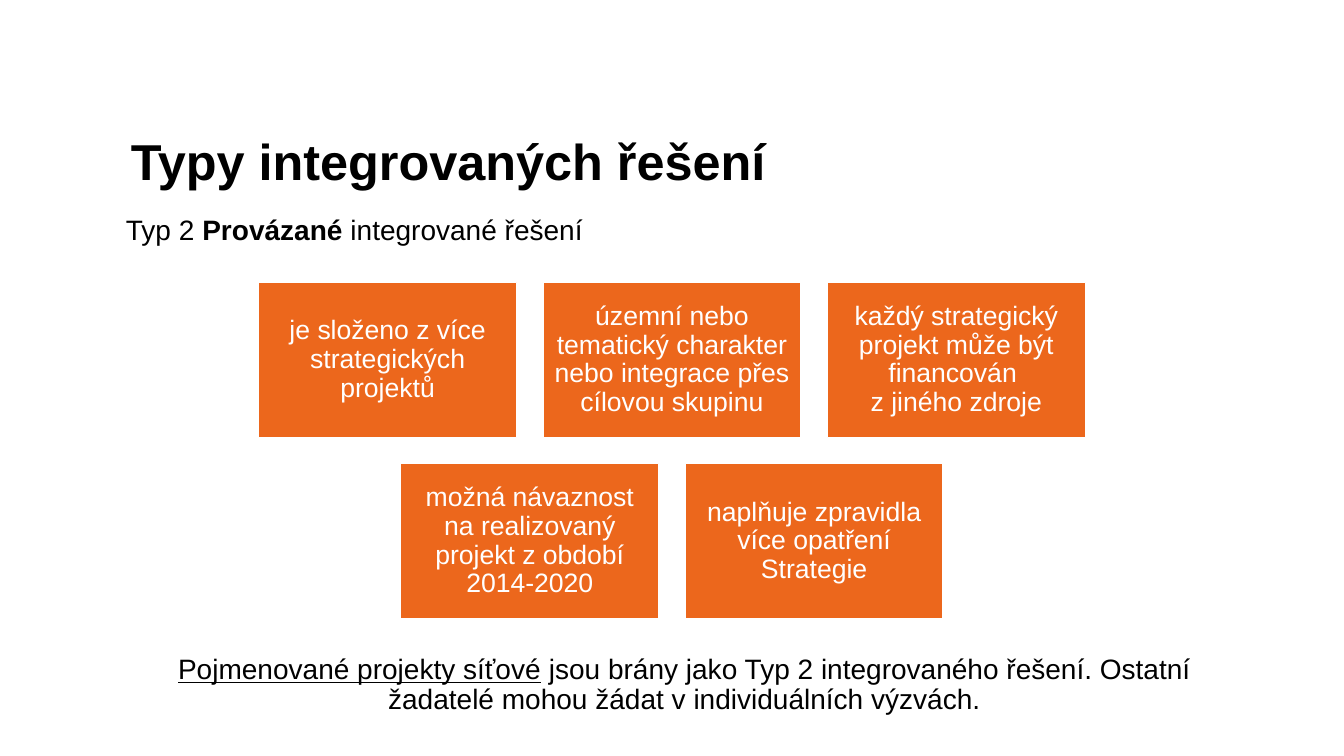
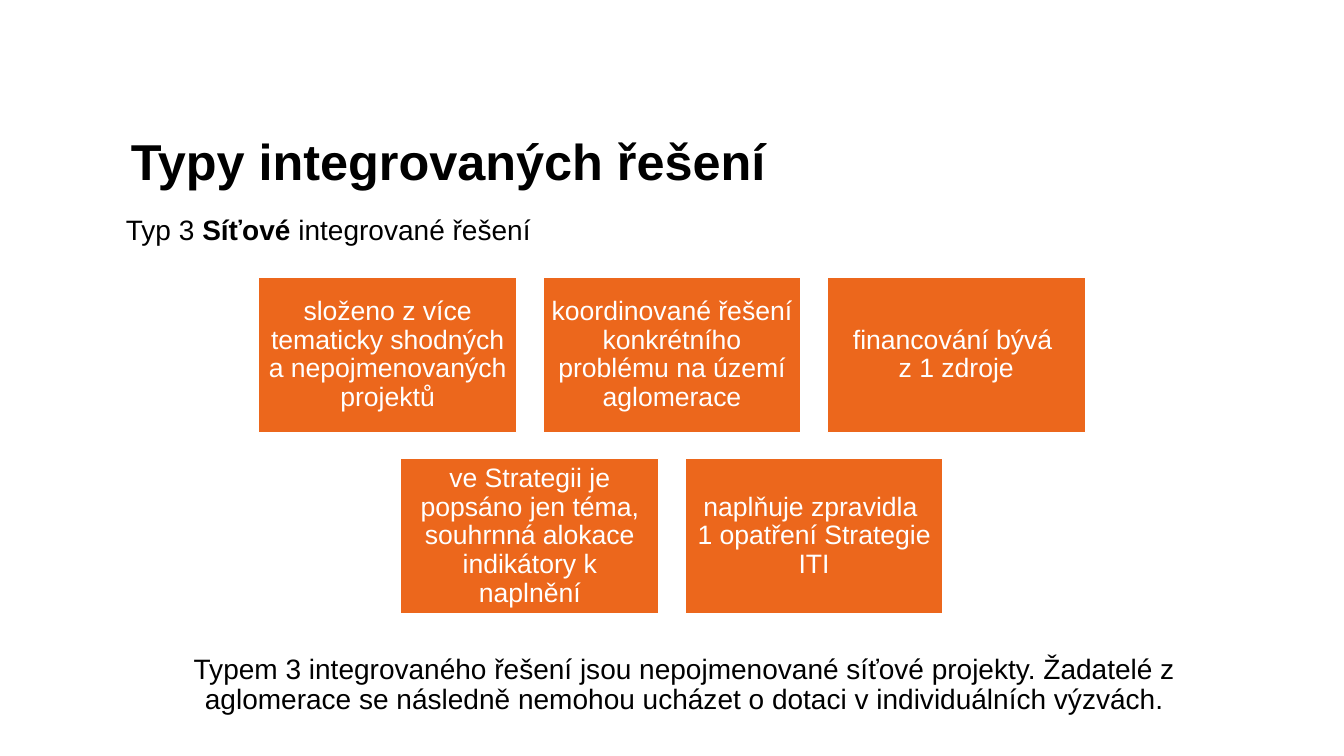
from pptx import Presentation
from pptx.dml.color import RGBColor
from pptx.enum.shapes import MSO_SHAPE
from pptx.enum.text import MSO_ANCHOR as Anchor, PP_ALIGN as Align
from pptx.util import Inches, Pt

TITLE = "Typy integrovaných řešení"
# Text is a list of (words, format) runs; a line feed is a line break.
SLIDES = [
    {
        "subtitle": [("Typ 2 ", {}), ("Provázané", {"bold": True}),
                     (" integrované řešení", {})],
        "grid_top": 2.8,
        "traits": [
            ["je složeno z více strategických projektů",
             "územní nebo tematický charakter nebo integrace přes cílovou skupinu",
             "každý strategický projekt může být financován \nz jiného zdroje"],
            ["možná návaznost na realizovaný projekt z období 2014-2020",
             "naplňuje zpravidla více opatření Strategie"],
        ],
        "summary": [("Pojmenované projekty síťové", {"underline": True}),
                    (" jsou brány jako Typ 2 integrovaného řešení. Ostatní "
                     "žadatelé mohou žádat v individuálních výzvách.", {})],
    },
    {
        "subtitle": [("Typ 3 ", {}), ("Síťové ", {"bold": True}),
                     ("integrované řešení", {})],
        "grid_top": 2.75,
        "traits": [
            ["složeno z více tematicky shodných a nepojmenovaných projektů",
             "koordinované řešení konkrétního problému na území aglomerace",
             "financování bývá \nz 1 zdroje"],
            ["ve Strategii je popsáno jen téma, souhrnná alokace "
             "indikátory k naplnění",
             "naplňuje zpravidla \n1 opatření Strategie ITI"],
        ],
        "summary": [("Typem 3 integrovaného řešení jsou nepojmenované síťové "
                     "projekty. Žadatelé z aglomerace se následně nemohou "
                     "ucházet o dotaci v individuálních výzvách.", {})],
    },
]

COLORS = {"text": "000000", "card": "EC671C", "on_card": "FFFFFF"}
FONT = "Arial"
SLIDE_W, SLIDE_H = 13.33, 7.5
CARD_W, CARD_H, GAP = 2.56, 1.54, 0.26
CARD_INSET = 0.08
TITLE_AREA = (1.2, 1.26, 11.5, 0.73)
SUBTITLE_AREA = (1.15, 2.1, 11.2, 0.42)
SUMMARY_AREA = (1.11, 6.45, 11.36, 0.83)


def color(name):
    return RGBColor.from_string(COLORS[name])


def write(frame, runs, size, ink="text", align=Align.LEFT, anchor=Anchor.TOP):
    frame.word_wrap = True
    frame.vertical_anchor = anchor
    paragraph = frame.paragraphs[0]
    paragraph.alignment = align
    paragraph.line_spacing = 0.9
    for words, extra in runs:
        for number, line in enumerate(words.split("\n")):
            if number:
                paragraph.add_line_break()
            run = paragraph.add_run()
            run.text = line
            look = {"name": FONT, "size": Pt(size), **extra}
            for attribute, value in look.items():
                setattr(run.font, attribute, value)
            run.font.color.rgb = color(ink)


def add_text(slide, area, runs, size, **layout):
    box = slide.shapes.add_textbox(*map(Inches, area))
    write(box.text_frame, runs, size, **layout)


def add_card(slide, left, top, trait):
    card = slide.shapes.add_shape(
        MSO_SHAPE.RECTANGLE, *map(Inches, (left, top, CARD_W, CARD_H)))
    card.shadow.inherit = False
    card.fill.solid()
    card.fill.fore_color.rgb = color("card")
    card.line.color.rgb = color("on_card")
    card.line.width = Pt(1)
    for side in ("left", "top", "right", "bottom"):
        setattr(card.text_frame, f"margin_{side}", Inches(CARD_INSET))
    write(card.text_frame, [(trait, {})], 19, "on_card", Align.CENTER, Anchor.MIDDLE)


def add_cards(slide, top, rows):
    """Stack rows of cards, each row centred on the slide."""
    for row, traits in enumerate(rows):
        row_width = len(traits) * (CARD_W + GAP) - GAP
        left = (SLIDE_W - row_width) / 2
        for column, trait in enumerate(traits):
            add_card(slide, left + column * (CARD_W + GAP),
                     top + row * (CARD_H + GAP), trait)


def main():
    deck = Presentation()
    deck.slide_width, deck.slide_height = Inches(SLIDE_W), Inches(SLIDE_H)
    for content in SLIDES:
        slide = deck.slides.add_slide(deck.slide_layouts[6])
        add_text(slide, TITLE_AREA, [(TITLE, {"bold": True})], 36,
                 anchor=Anchor.MIDDLE)
        add_text(slide, SUBTITLE_AREA, content["subtitle"], 20)
        add_cards(slide, content["grid_top"], content["traits"])
        add_text(slide, SUMMARY_AREA, content["summary"], 20, align=Align.CENTER)
    deck.save("out.pptx")


if __name__ == "__main__":
    main()
